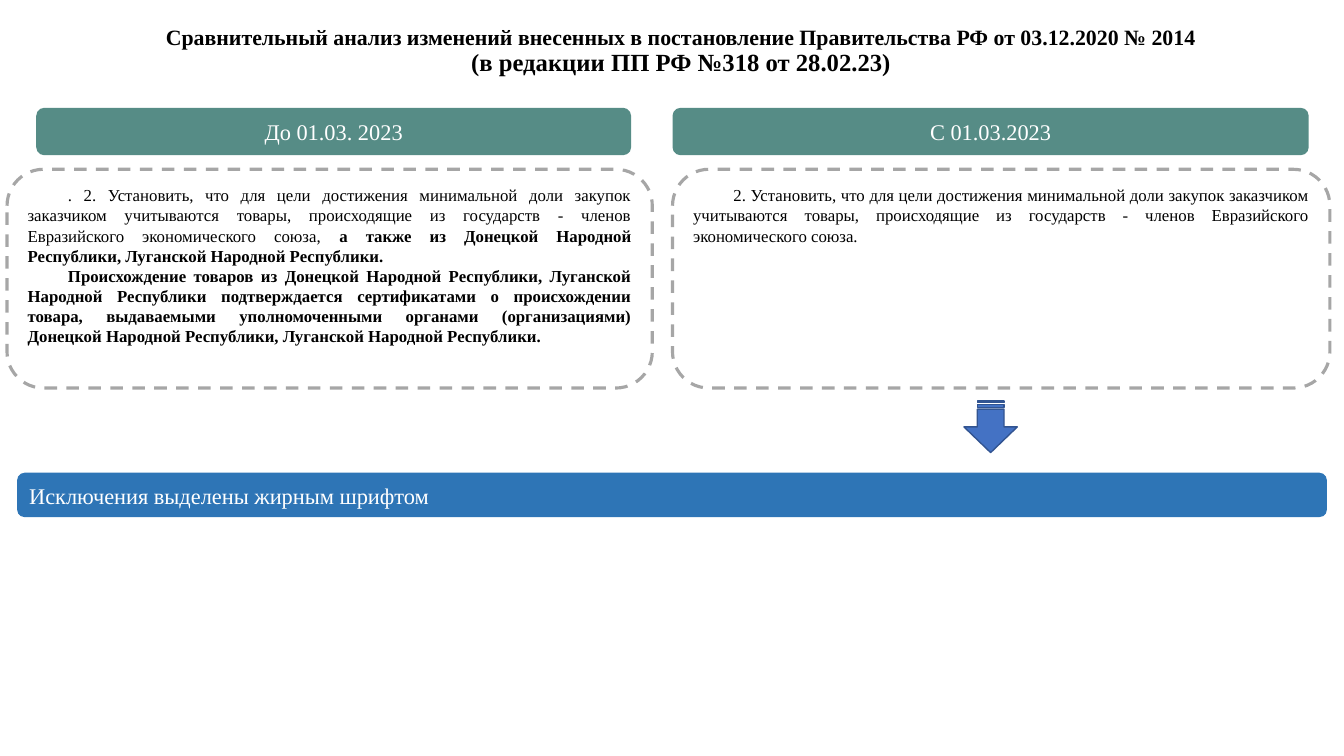
from dataclasses import dataclass

import pptx
import pptx.dml.color
import pptx.enum.dml
import pptx.enum.shapes
import pptx.enum.text
import pptx.util

ALIGN = pptx.enum.text.PP_ALIGN
ANCHOR = pptx.enum.text.MSO_ANCHOR
SHAPE = pptx.enum.shapes.MSO_SHAPE


@dataclass(frozen=True)
class Theme:
    font: str = "Times New Roman"
    black: str = "000000"
    white: str = "FFFFFF"
    header: str = "568C86"
    note: str = "2E75B6"
    dash: str = "A6A6A6"
    arrow: str = "4472C4"
    arrow_line: str = "325491"
    title_size: float = 15.6
    subtitle_size: float = 17.6
    label_size: int = 16
    body_size: int = 12


THEME = Theme()


def px(length):
    return pptx.util.Emu(length * 9144)


def rgb(color):
    return pptx.dml.color.RGBColor.from_string(color)


def place(shape, left, top, width, height):
    shape.left, shape.top = px(left), px(top)
    shape.width, shape.height = px(width), px(height)


def format_paragraph(paragraph, size, color, alignment):
    paragraph.alignment = alignment
    paragraph.font.name = THEME.font
    paragraph.font.size = pptx.util.Pt(size)
    paragraph.font.color.rgb = rgb(color)


def add_shape(slide, kind, box, fill=None):
    shape = slide.shapes.add_shape(kind, *map(px, box))
    shape.shadow.inherit = False
    if fill:
        shape.fill.solid()
        shape.fill.fore_color.rgb = rgb(fill)
    else:
        shape.fill.background()
    shape.line.fill.background()
    return shape


def set_line(shape, color, width):
    shape.line.color.rgb = rgb(color)
    shape.line.width = pptx.util.Pt(width)


def set_title(slide, heading, edition):
    title = slide.shapes.title
    place(title, 42, -4, 1267, 109)
    frame = title.text_frame
    frame.word_wrap = True
    frame.auto_size = pptx.enum.text.MSO_AUTO_SIZE.NONE
    frame.vertical_anchor = ANCHOR.BOTTOM
    frame.margin_bottom = px(29)
    paragraph = frame.paragraphs[0]
    format_paragraph(paragraph, THEME.title_size, THEME.black, ALIGN.CENTER)
    paragraph.font.bold = True
    paragraph.line_spacing = 0.9
    paragraph.add_run().text = heading
    paragraph.add_line_break()
    run = paragraph.add_run()
    run.text = edition
    run.font.size = pptx.util.Pt(THEME.subtitle_size)


def add_bar(slide, box, text, fill, alignment=ALIGN.CENTER):
    bar = add_shape(slide, SHAPE.ROUNDED_RECTANGLE, box, fill)
    bar.text_frame.vertical_anchor = ANCHOR.MIDDLE
    paragraph = bar.text_frame.paragraphs[0]
    paragraph.text = text
    format_paragraph(paragraph, THEME.label_size, THEME.white, alignment)
    return bar


def add_panel(slide, box, paragraphs):
    panel = add_shape(slide, SHAPE.ROUNDED_RECTANGLE, box)
    set_line(panel, THEME.dash, 2.25)
    panel.line.dash_style = pptx.enum.dml.MSO_LINE.DASH
    frame = panel.text_frame
    frame.vertical_anchor = ANCHOR.TOP
    for index, runs in enumerate(paragraphs):
        paragraph = frame.add_paragraph() if index else frame.paragraphs[0]
        format_paragraph(paragraph, THEME.body_size, THEME.black, ALIGN.JUSTIFY)
        paragraph._p.get_or_add_pPr().set("indent", str(px(40)))
        for text, bold in runs:
            run = paragraph.add_run()
            run.text = text
            run.font.bold = bold


def add_down_arrow(slide, box):
    arrow = add_shape(slide, SHAPE.STRIPED_RIGHT_ARROW, box, THEME.arrow)
    set_line(arrow, THEME.arrow_line, 1)
    arrow.rotation = 90


def main():
    presentation = pptx.Presentation()
    presentation.slide_width, presentation.slide_height = px(1333), px(750)
    slide = presentation.slides.add_slide(presentation.slide_layouts[5])

    set_title(
        slide,
        "Сравнительный анализ изменений внесенных в постановление "
        "Правительства РФ от 03.12.2020 № 2014",
        "(в редакции ПП РФ №318 от 28.02.23)",
    )

    rule = (
        "2. Установить, что для цели достижения минимальной доли закупок "
        "заказчиком учитываются товары, происходящие из государств - членов "
        "Евразийского экономического союза"
    )
    republics = "Донецкой Народной Республики, Луганской Народной Республики"
    before = [
        [(f". {rule}, ", False), (f"а также из {republics}.", True)],
        [(
            f"Происхождение товаров из {republics} подтверждается "
            "сертификатами о происхождении товара, выдаваемыми "
            f"уполномоченными органами (организациями) {republics}.",
            True,
        )],
    ]
    after = [[(f"{rule}.", False)]]

    add_panel(slide, (7, 168, 640, 217), before)
    add_panel(slide, (667, 168, 652, 217), after)
    add_bar(slide, (36, 107, 590, 47), "До 01.03. 2023", THEME.header)
    add_bar(slide, (667, 107, 631, 47), "С 01.03.2023", THEME.header)

    note = add_bar(
        slide, (17, 469, 1299, 44), "Исключения выделены жирным шрифтом",
        THEME.note, ALIGN.JUSTIFY,
    )
    note.text_frame.paragraphs[0].line_spacing = 1.07
    add_down_arrow(slide, (957, 397, 51, 53))

    presentation.save("out.pptx")


if __name__ == "__main__":
    main()
